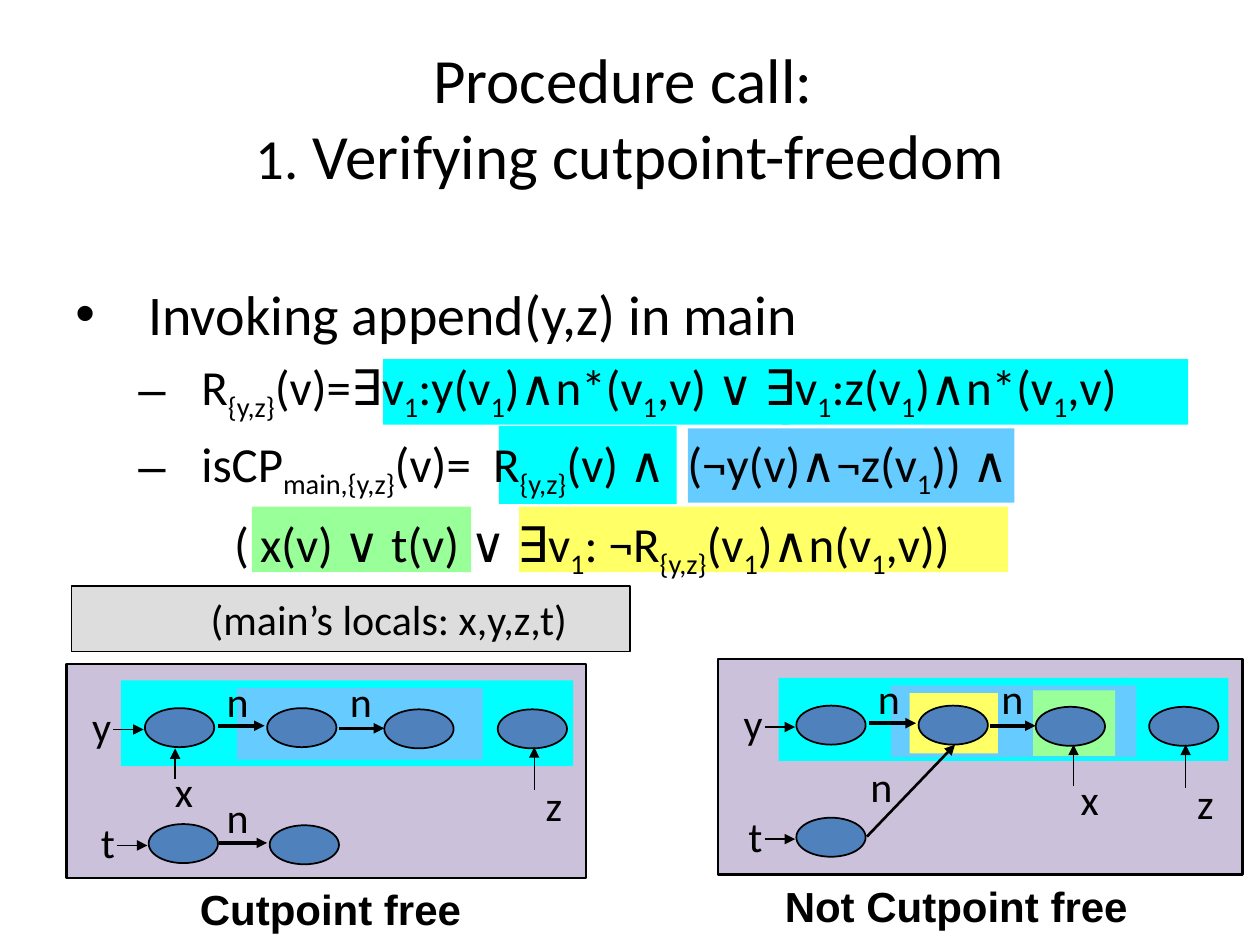
"""Build a slide on verifying cutpoint-freedom at a procedure call."""
from lxml import etree
from pptx import Presentation
from pptx.dml.color import RGBColor
from pptx.enum.shapes import MSO_CONNECTOR, MSO_SHAPE
from pptx.enum.text import MSO_ANCHOR, PP_ALIGN
from pptx.oxml.ns import qn
from pptx.util import Inches, Pt

RECT, OVAL = MSO_SHAPE.RECTANGLE, MSO_SHAPE.OVAL
STRAIGHT = MSO_CONNECTOR.STRAIGHT
TOP, MIDDLE = MSO_ANCHOR.TOP, MSO_ANCHOR.MIDDLE
LEFT, CENTER, RIGHT = PP_ALIGN.LEFT, PP_ALIGN.CENTER, PP_ALIGN.RIGHT

COLORS = {
    "black": "000000", "panel": "CCC1DA", "cyan": "00FFFF", "sky": "66CCFF",
    "green": "99FF99", "yellow": "FFFF66", "node": "4F81BD", "gray": "DDDDDD",
}

TITLE = [("Procedure call: \v", 36), ("1.", 32.4), (" Verifying cutpoint-freedom", 36)]

BODY = [
    ("•", 0.58, -0.58, 32, 0, "Invoking append(y,z) in main"),
    ("–", 1, -0.5, 28, 5.5, "R|{y,z}|(v)=∃v|1|:y(v|1|)∧n*(v|1|,v) ∨ ∃v|1|:z(v|1|)∧n*(v|1|,v)"),
    ("–", 1, -0.5, 28, 5.5, "isCP|main,{y,z}|(v)=  R|{y,z}|(v) ∧  (¬y(v)∧¬z(v|1|)) ∧"),
    (None, 1.26, 0, 28, 7.5, "( x(v) ∨ t(v) ∨ ∃v|1|: ¬R|{y,z}|(v|1|)∧n(v|1|,v))"),
]

PANELS = [(5.7, 5.23, 4.16, 1.71), (0.53, 5.27, 4.12, 1.7)]
HIGHLIGHTS = [
    ("cyan", 6.18, 5.38, 2.75, 0.66), ("cyan", 8.89, 5.38, 0.86, 0.66),
    ("sky", 7.07, 5.44, 1.95, 0.57), ("green", 8.2, 5.48, 0.65, 0.52),
    ("yellow", 7.22, 5.5, 0.7, 0.48),
    ("cyan", 0.96, 5.4, 2.89, 0.68), ("cyan", 3.85, 5.4, 0.7, 0.68),
    ("sky", 1.88, 5.46, 1.95, 0.57),
    ("yellow", 4.12, 4.02, 3.88, 0.52), ("green", 2, 4.02, 1.74, 0.52),
    ("sky", 5.46, 3.4, 2.59, 0.59), ("cyan", 6.21, 2.85, 3.22, 0.52),
    ("cyan", 3.04, 2.85, 3.22, 0.52), ("cyan", 3.96, 3.38, 1.41, 0.62),
]

LIST_HEAP = {
    "nodes": [(1.15, 5.62), (2.12, 5.62), (3.05, 5.63), (3.95, 5.63)],
    "arrows": [
        (0.9, 5.79, 1.14, 5.79, 0.75), (1.73, 5.76, 2.1, 5.76, 2),
        (2.69, 5.78, 3.05, 5.78, 2), (4.24, 6.27, 4.24, 5.93, 0.75),
    ],
    "labels": [
        ("y", 0.57, 5.51, 0.41, RIGHT), ("z", 4.09, 6.14, 0.47, RIGHT),
        ("n", 1.64, 5.31, 0.49, CENTER), ("n", 2.62, 5.31, 0.49, CENTER),
    ],
}
T_HEAP = {
    "nodes": [(1.18, 6.54)],
    "arrows": [(0.93, 6.71, 1.17, 6.71, 0.75)],
    "labels": [("t", 0.6, 6.43, 0.41, RIGHT)],
}
FREE_ONLY = {
    "nodes": [(2.14, 6.55)],
    "arrows": [(1.74, 6.69, 2.12, 6.69, 2), (1.39, 6.18, 1.39, 5.94, 0.75)],
    "labels": [("n", 1.64, 6.23, 0.49, CENTER), ("x", 1.22, 6.03, 0.41, RIGHT)],
}
NOT_FREE_ONLY = {
    "nodes": [],
    "arrows": [(6.88, 6.64, 7.58, 5.91, 1.5), (8.52, 6.24, 8.52, 5.91, 0.75)],
    "labels": [("n", 6.75, 5.99, 0.49, CENTER), ("x", 8.35, 6.09, 0.47, RIGHT)],
}
HEAPS = [
    (LIST_HEAP, 0, 0), (T_HEAP, 0, 0), (FREE_ONLY, 0, 0),
    (LIST_HEAP, 5.17, -0.02), (T_HEAP, 5.14, -0.05), (NOT_FREE_ONLY, 0, 0),
]
NODE_W, NODE_H = 0.55, 0.31
CAPTIONS = [("Cutpoint free", 1.13, 7.01, 3.03), ("Not Cutpoint free", 5.91, 6.99, 3.54)]
LOCALS = "(main’s locals: x,y,z,t)"


def rgb(name):
    return RGBColor.from_string(COLORS[name])


def add_shape(slide, kind, box, fill, line=None):
    s = slide.shapes.add_shape(kind, *map(Inches, box))
    s.shadow.inherit = False
    s.fill.solid()
    s.fill.fore_color.rgb = rgb(fill)
    if line:
        s.line.color.rgb = rgb("black")
        s.line.width = Pt(line)
    else:
        s.line.fill.background()
    return s


def add_arrow(slide, x1, y1, x2, y2, width):
    c = slide.shapes.add_connector(STRAIGHT, *map(Inches, (x1, y1, x2, y2)))
    c.line.color.rgb = rgb("black")
    c.line.width = Pt(width)
    etree.SubElement(c.line._get_or_add_ln(), qn("a:tailEnd"), type="triangle")
    etree.SubElement(c._element.spPr, qn("a:effectLst"))


def set_frame(s, anchor=TOP, insets=(0.1, 0.05, 0.1, 0.05)):
    tf = s.text_frame
    tf.word_wrap = True
    tf.vertical_anchor = anchor
    tf.margin_left, tf.margin_top, tf.margin_right, tf.margin_bottom = map(Inches, insets)
    return tf


def add_frame(slide, box, anchor=TOP, **options):
    return set_frame(slide.shapes.add_textbox(*map(Inches, box)), anchor, **options)


def style_run(r, size, font="Calibri", bold=False):
    r.font.size = Pt(size)
    r.font.name = font
    r.font.bold = bold
    r.font.color.rgb = rgb("black")


def write_line(tf, text, align, font="Calibri", bold=False):
    tf.text = text
    p = tf.paragraphs[0]
    p.alignment = align
    style_run(p.runs[0], 24, font, bold)


def write_body(tf):
    for i, (bullet, margin, indent, size, before, text) in enumerate(BODY):
        p = tf.paragraphs[0] if i == 0 else tf.add_paragraph()
        p.alignment = LEFT
        p.space_before = Pt(before)
        pPr = p._p.get_or_add_pPr()
        pPr.set("marL", str(Inches(margin)))
        pPr.set("indent", str(Inches(indent)))
        if bullet:
            etree.SubElement(pPr, qn("a:buFont"), typeface="Arial")
            etree.SubElement(pPr, qn("a:buChar"), char=bullet)
        for j, part in enumerate(text.split("|")):
            r = p.add_run()
            r.text = part
            style_run(r, size)
            if j % 2:
                r.font._element.set("baseline", "-25000")


def add_heap(slide, heap, dx, dy):
    for x, y in heap["nodes"]:
        add_shape(slide, OVAL, (x + dx, y + dy, NODE_W, NODE_H), "node", 1)
    for x1, y1, x2, y2, width in heap["arrows"]:
        add_arrow(slide, x1 + dx, y1 + dy, x2 + dx, y2 + dy, width)
    for text, x, y, w, align in heap["labels"]:
        write_line(add_frame(slide, (x + dx, y + dy, w, 0.5)), text, align)


def main():
    prs = Presentation()
    prs.slide_width, prs.slide_height = Inches(10), Inches(7.5)
    slide = prs.slides.add_slide(prs.slide_layouts[6])
    for box in PANELS:
        add_shape(slide, RECT, box, "panel", 1.5)
    for fill, *box in HIGHLIGHTS:
        add_shape(slide, RECT, box, fill)

    p = add_frame(slide, (0.5, 0.3, 9, 1.25), MIDDLE).paragraphs[0]
    p.alignment = CENTER
    for text, size in TITLE:
        first, *rest = text.split("\v")
        r = p.add_run()
        r.text = first
        style_run(r, size)
        if rest:
            p.add_line_break()

    for heap, dx, dy in HEAPS:
        add_heap(slide, heap, dx, dy)

    indented = (0, 0, 0.5, 0)
    s = add_shape(slide, RECT, (0.57, 4.65, 4.43, 0.52), "gray", 0.75)
    write_line(set_frame(s, MIDDLE, indented), LOCALS, RIGHT)
    for text, x, y, w in CAPTIONS:
        tf = add_frame(slide, (x, y, w, 0.4), insets=indented)
        write_line(tf, text, RIGHT, "Arial", True)
    write_body(add_frame(slide, (0.5, 2.17, 9.5, 2.45)))
    prs.save("out.pptx")


if __name__ == "__main__":
    main()
